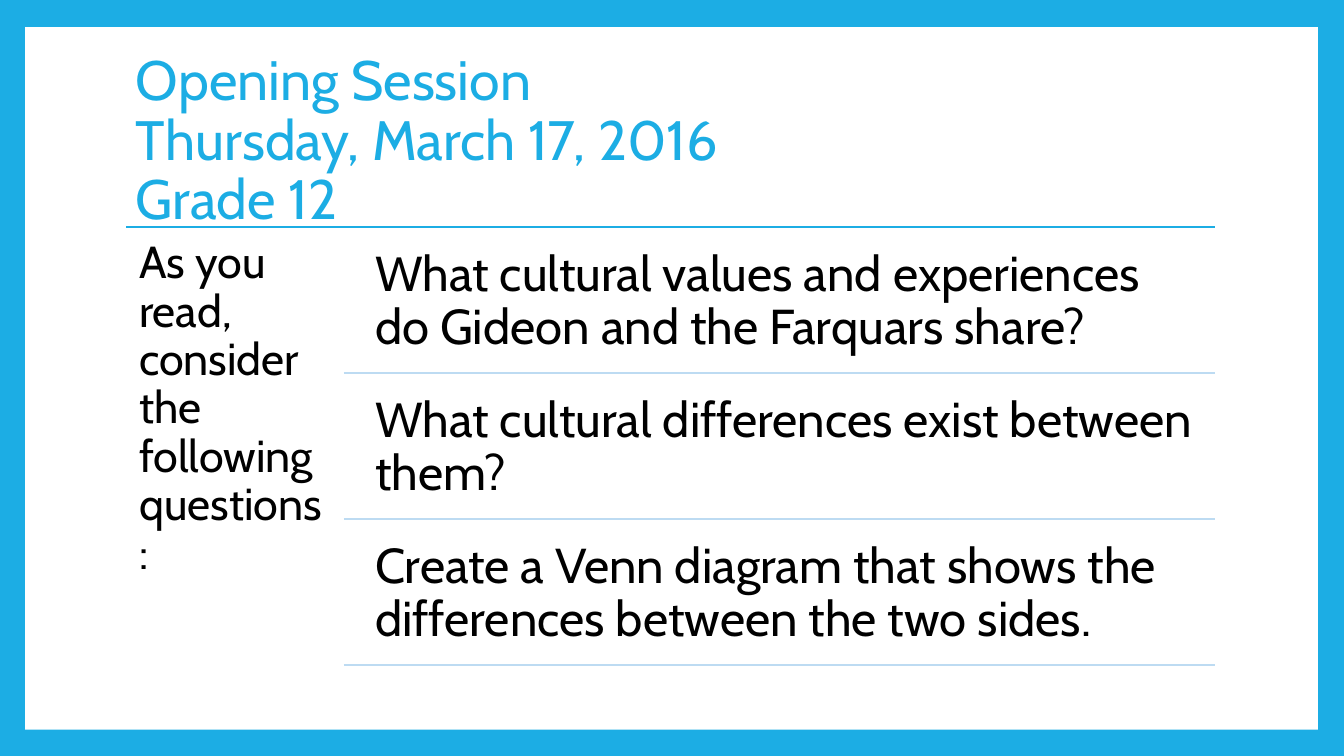
from dataclasses import dataclass

from lxml import etree
from pptx import Presentation
from pptx.dml.color import RGBColor
from pptx.enum import shapes, text
from pptx.oxml import ns
from pptx.slide import Slide
from pptx.util import Inches, Pt

FONT = "Cabin"
COLORS = {
    "accent": "1CADE4",
    "panel": "FFFFFF",
    "text": "000000",
    "divider": "BDDBF2",
}
LEFT, RIGHT = 1.25, 12.05
BODY_TOP = 2.25
DIVIDER_LEFT, QUESTION_LEFT = 3.41, 3.57
QUESTION_GAP, QUESTION_HEIGHT = 0.07, 1.38
QUESTIONS = [
    "What cultural values and experiences do Gideon and the Farquars share?",
    "What cultural differences exist between them?",
    "Create a Venn diagram that shows the differences between the two sides.",
]


@dataclass
class TextBlock:
    text: str
    left: float
    top: float
    width: float
    height: float
    size: float
    margin_x: float
    margin_y: float
    color: str = "text"
    anchor: text.MSO_ANCHOR = text.MSO_ANCHOR.TOP


@dataclass
class Rule:
    left: float
    y: float
    color: str


def rgb(name: str) -> RGBColor:
    return RGBColor.from_string(COLORS[name])


def add_text(slide: Slide, block: TextBlock) -> None:
    box = slide.shapes.add_textbox(
        Inches(block.left), Inches(block.top), Inches(block.width), Inches(block.height)
    )
    tf = box.text_frame
    tf.word_wrap = True
    tf.vertical_anchor = block.anchor
    tf.margin_left = tf.margin_right = Inches(block.margin_x)
    tf.margin_top = tf.margin_bottom = Inches(block.margin_y)
    tf.text = block.text
    p = tf.paragraphs[0]
    p.line_spacing = 0.9
    for r in p.runs:
        r.font.name = FONT
        r.font.size = Pt(block.size)
        r.font.color.rgb = rgb(block.color)


def add_rule(slide: Slide, rule: Rule) -> None:
    """Draw a horizontal line from rule.left to the right margin."""
    line = slide.shapes.add_connector(
        shapes.MSO_CONNECTOR.STRAIGHT,
        Inches(rule.left), Inches(rule.y), Inches(RIGHT), Inches(rule.y),
    )
    line.line.color.rgb = rgb(rule.color)
    line.line.width = Pt(1.5)
    etree.SubElement(line._element.spPr, ns.qn("a:effectLst"))


def add_panel(slide: Slide) -> None:
    panel = slide.shapes.add_shape(
        shapes.MSO_SHAPE.RECTANGLE,
        Inches(0.25), Inches(0.27), Inches(12.82), Inches(6.97),
    )
    panel.shadow.inherit = False
    panel.fill.solid()
    panel.fill.fore_color.rgb = rgb("panel")
    panel.line.fill.background()


def main() -> None:
    prs = Presentation()
    prs.slide_width, prs.slide_height = Inches(13.33), Inches(7.5)
    slide = prs.slides.add_slide(prs.slide_layouts[6])
    slide.background.fill.solid()
    slide.background.fill.fore_color.rgb = rgb("accent")
    add_panel(slide)

    add_text(slide, TextBlock(
        "Opening Session\vThursday, March 17, 2016\vGrade 12",
        LEFT, 0.67, RIGHT - LEFT, 1.48, 39.6, 0.1, 0.05,
        color="accent", anchor=text.MSO_ANCHOR.MIDDLE,
    ))
    add_rule(slide, Rule(LEFT, BODY_TOP, "accent"))
    add_text(slide, TextBlock(
        "As you read, consider the following questions:",
        LEFT, BODY_TOP, 2.16, 4.42, 32, 0.13, 0.13,
    ))

    pitch = QUESTION_GAP + QUESTION_HEIGHT
    for i, question in enumerate(QUESTIONS):
        top = BODY_TOP + i * pitch + QUESTION_GAP
        add_text(slide, TextBlock(
            question, QUESTION_LEFT, top, RIGHT - QUESTION_LEFT, QUESTION_HEIGHT,
            35, 0.15, 0.15,
        ))
        add_rule(slide, Rule(DIVIDER_LEFT, top + QUESTION_HEIGHT, "divider"))

    prs.save("out.pptx")


if __name__ == "__main__":
    main()
